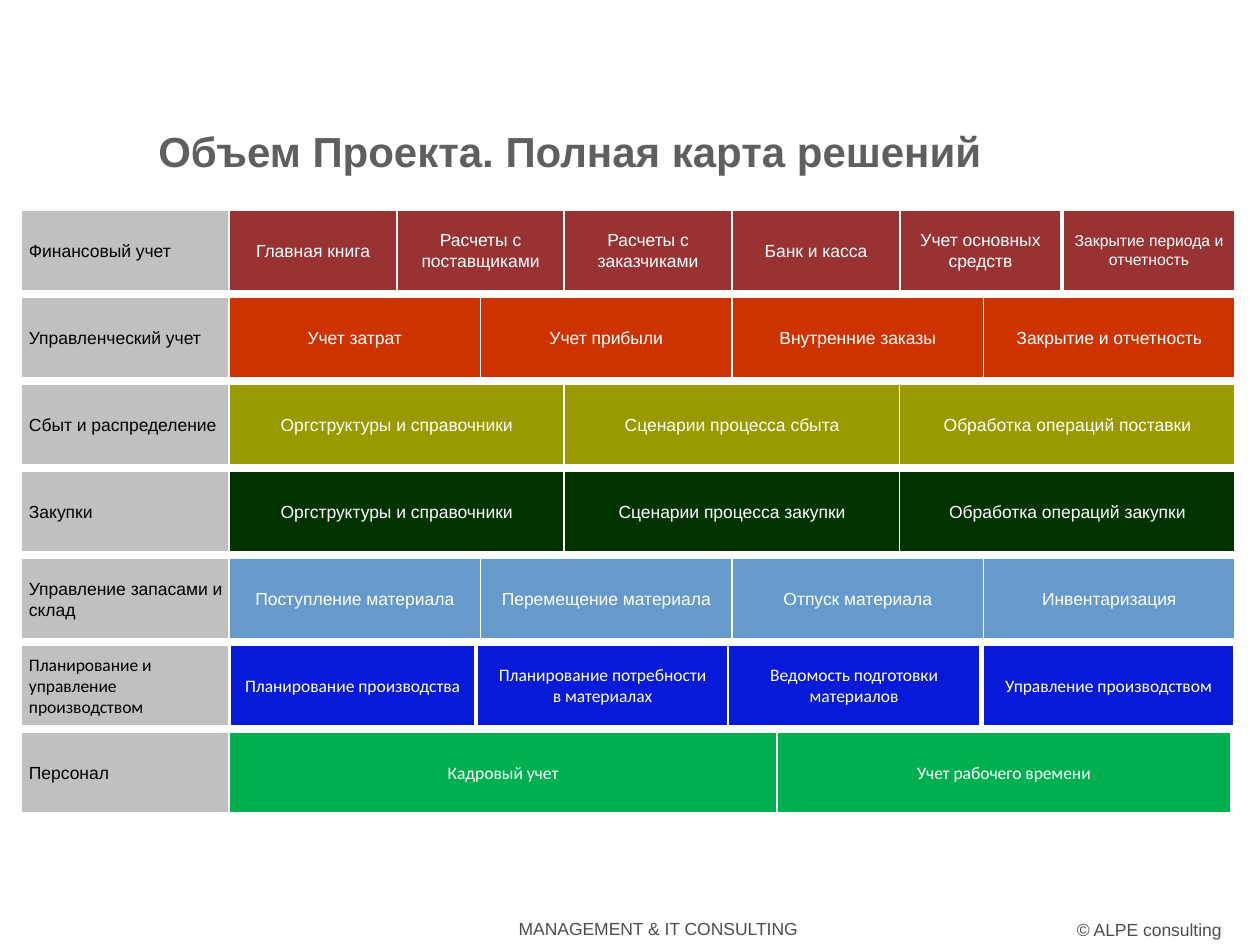
import pptx
import pptx.util
import pptx.dml.color
import pptx.enum.shapes
import pptx.enum.text

PX = 914400 / 126
ALIGN = pptx.enum.text.PP_ALIGN
ANCHOR = pptx.enum.text.MSO_ANCHOR


def rgb(value):
    return pptx.dml.color.RGBColor.from_string(value)


def put_text(sp, text, size=10, font="Arial", color="FFFFFF", bold=False,
             align=ALIGN.CENTER, anchor=ANCHOR.MIDDLE, margins=None, spacing=None):
    tf = sp.text_frame
    tf.word_wrap = True
    tf.vertical_anchor = anchor
    if margins:
        tf.margin_left, tf.margin_top, tf.margin_right, tf.margin_bottom = [
            round(m * PX) for m in margins]
    tf.text = text
    p = tf.paragraphs[0]
    p.alignment = align
    p.line_spacing = spacing
    for r in p.runs:
        r.font.size = pptx.util.Pt(size)
        r.font.name = font
        r.font.bold = bold
        r.font.color.rgb = rgb(color)


prs = pptx.Presentation()
prs.slide_width = pptx.util.Inches(10)
prs.slide_height = pptx.util.Inches(7.5)
s = prs.slides.add_slide(prs.slide_layouts[6])

# Title and footer
texts = [
    ((146, 125, 880, 69), "Объем Проекта. Полная карта решений",
     dict(size=24, color="5F5F5F", bold=True, align=ALIGN.LEFT, spacing=0.9)),
    ((432, 912, 378, 34), "MANAGEMENT & IT CONSULTING",
     dict(color="4D4D4D", align=ALIGN.RIGHT)),
    ((929, 913, 305, 34), "© ALPE consulting",
     dict(color="4D4D4D", align=ALIGN.RIGHT)),
]
for box, text, fmt in texts:
    sp = s.shapes.add_textbox(*[round(v * PX) for v in box])
    put_text(sp, text, anchor=ANCHOR.TOP, **fmt)

# Map rows: label, label font, cell font, fill, cells, own (left, right) edges if uneven
rows = [
    ("Финансовый учет", "Arial", "Arial", "993333",
     ["Главная книга", "Расчеты с поставщиками", "Расчеты с заказчиками",
      "Банк и касса", "Учет основных средств", "Закрытие периода и отчетность"],
     [(229, 397), (397, 564), (564, 732), (732, 900), (900, 1061), (1063, 1235)]),
    ("Управленческий учет", "Arial", "Arial", "CC3300",
     ["Учет затрат", "Учет прибыли", "Внутренние заказы", "Закрытие и отчетность"], None),
    ("Сбыт и распределение", "Arial", "Arial", "999900",
     ["Оргструктуры и справочники", "Сценарии процесса сбыта",
      "Обработка операций поставки"], None),
    ("Закупки", "Arial", "Arial", "003300",
     ["Оргструктуры и справочники", "Сценарии процесса закупки",
      "Обработка операций закупки"], None),
    ("Управление запасами и склад", "Arial", "Arial", "6699CC",
     ["Поступление материала", "Перемещение материала", "Отпуск материала",
      "Инвентаризация"], None),
    ("Планирование и управление производством", "Calibri", "Calibri", "071AD7",
     ["Планирование производства", "Планирование потребности\vв материалах",
      "Ведомость подготовки\vматериалов", "Управление производством"],
     [(230, 475), (477, 728), (728, 980), (983, 1234)]),
    ("Персонал", "Arial", "Calibri", "00B050",
     ["Кадровый учет", "Учет рабочего времени"], [(229, 777), (777, 1231)]),
]
LEFT, CELLS_LEFT, RIGHT = 21, 229, 1235
TOP, PITCH, HEIGHT = 210, 87, 81

for i, (label, label_font, cell_font, fill, cells, edges) in enumerate(rows):
    if edges is None:
        w = (RIGHT - CELLS_LEFT) / len(cells)
        edges = [(CELLS_LEFT + w * k, CELLS_LEFT + w * (k + 1)) for k in range(len(cells))]

    # Row label first, then its cells
    boxes = [(LEFT, CELLS_LEFT, "C0C0C0", label,
              dict(font=label_font, color="000000", align=ALIGN.LEFT, margins=(8, 1, 1, 1)))]
    for (x1, x2), text in zip(edges, cells):
        size = 9 if text.startswith("Закрытие периода") else 10
        boxes.append((x1, x2, fill, text,
                      dict(font=cell_font, size=size, margins=(0, 0, 0, 1))))

    for x1, x2, color, text, fmt in boxes:
        sp = s.shapes.add_shape(
            pptx.enum.shapes.MSO_SHAPE.RECTANGLE, round(x1 * PX),
            round((TOP + i * PITCH) * PX), round((x2 - x1) * PX), round(HEIGHT * PX))
        sp.shadow.inherit = False
        sp.fill.solid()
        sp.fill.fore_color.rgb = rgb(color)
        sp.line.color.rgb = rgb("FFFFFF")
        sp.line.width = pptx.util.Pt(1)
        put_text(sp, text, **fmt)

prs.save("out.pptx")
